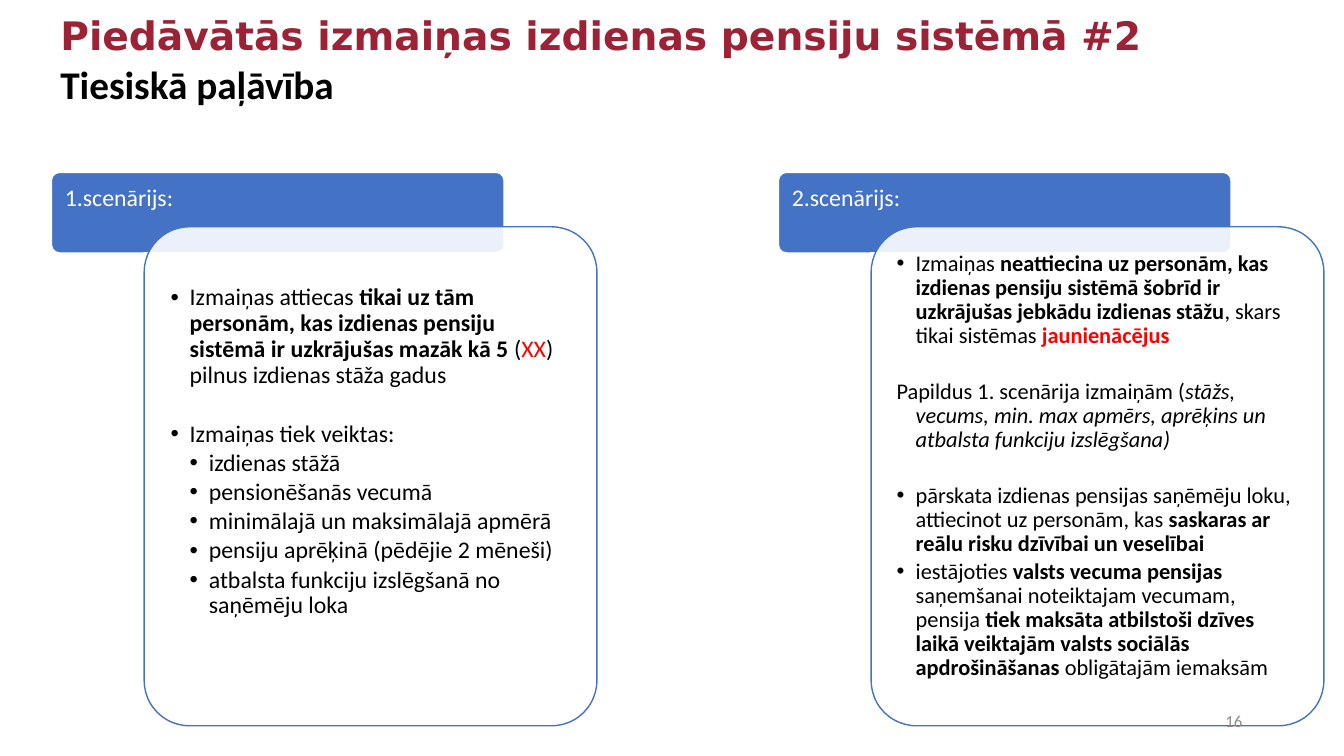
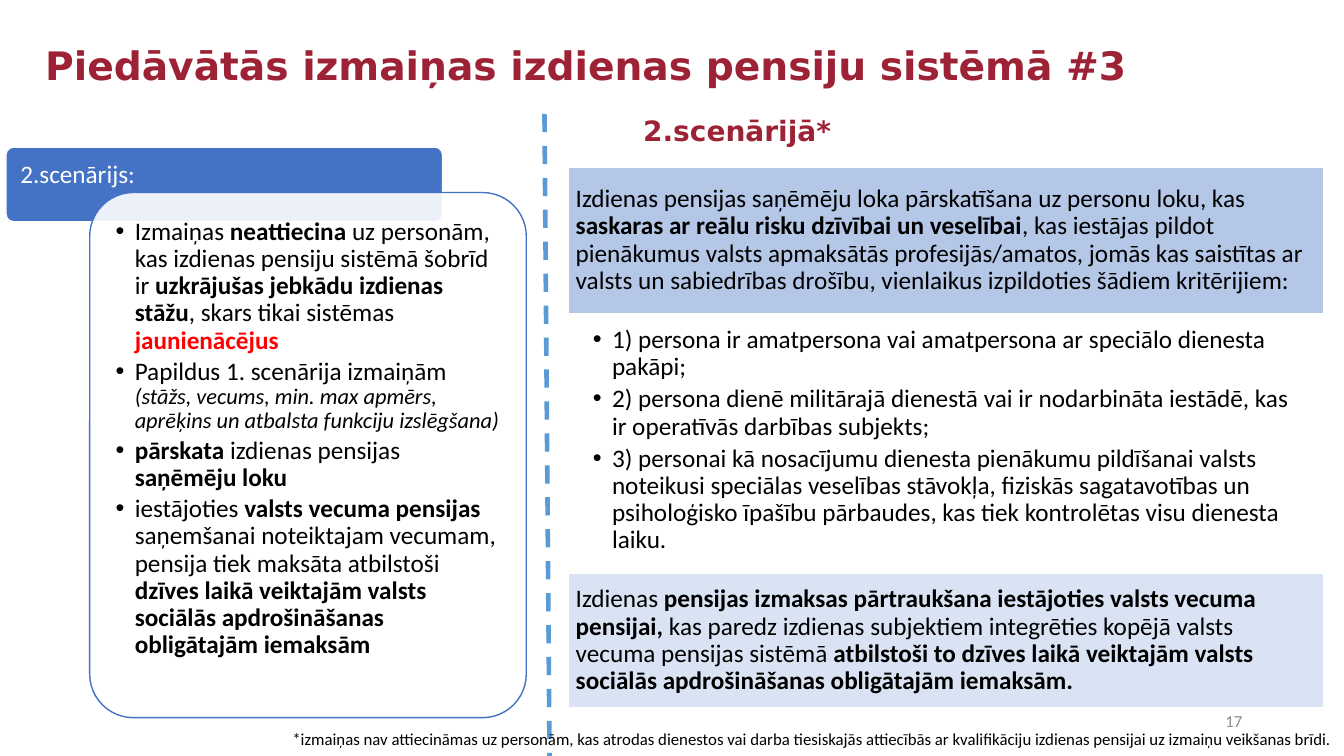
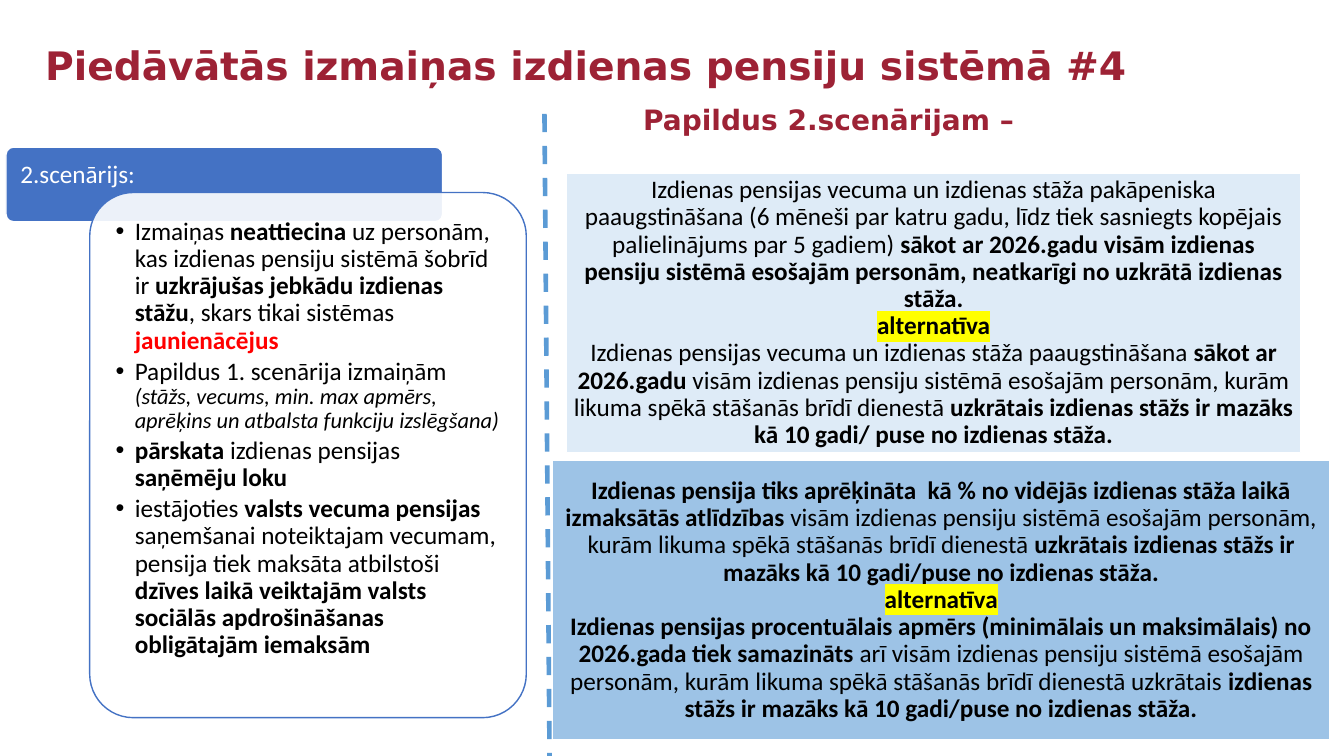
from dataclasses import dataclass
from typing import Optional, Sequence, Union

from lxml.etree import SubElement
from pptx import Presentation
from pptx.dml.color import RGBColor
from pptx.enum.dml import MSO_LINE
from pptx.enum.shapes import MSO_CONNECTOR, MSO_SHAPE
from pptx.enum.text import MSO_ANCHOR, PP_ALIGN
from pptx.oxml.ns import qn
from pptx.util import Inches, Pt


@dataclass(frozen=True)
class Theme:
    body_font: str = "Calibri"
    title_font: str = "DejaVu Sans"
    black: str = "000000"
    white: str = "FFFFFF"
    title: str = "9D2235"
    accent: str = "4472C4"
    divider: str = "5B9BD5"
    alert: str = "FF0000"
    muted: str = "8C8C8C"
    marker: str = "FFFF00"
    panel_strong: str = "B4C7E7"
    panel_soft: str = "DAE3F3"
    panel_pale: str = "DEEBF7"
    panel_sky: str = "9DC3E6"
    title_size: float = 28
    heading_size: float = 20
    text_size: float = 18
    card_size: float = 17
    dense_size: float = 16
    small_size: float = 12
    line_spacing: float = 0.9
    hanging: float = 0.19


THEME = Theme()


@dataclass(frozen=True)
class Span:
    text: str
    bold: bool = False
    italic: bool = False
    color: Optional[str] = None
    highlight: Optional[str] = None
    size: Optional[float] = None


@dataclass(frozen=True)
class Line:
    spans: Sequence[Union[str, Span]]
    level: int = 0
    bullet: bool = False
    gap_before: bool = False


@dataclass(frozen=True)
class Style:
    size: float
    color: str = THEME.black
    font: str = THEME.body_font
    bold: bool = False
    align: PP_ALIGN = PP_ALIGN.LEFT
    spacing: float = 1.0
    after: float = 0  # share of the type size


@dataclass(frozen=True)
class Box:
    left: float
    top: float
    width: float
    height: float

    def lengths(self) -> list:
        return [Inches(n) for n in (self.left, self.top, self.width, self.height)]


@dataclass(frozen=True)
class Card:
    """A header bar with a translucent, offset body over its lower edge."""
    label: str
    header: Box
    body: Box
    header_size: float
    body_size: float
    header_inset: float
    body_inset: float
    body_top_inset: float
    lines: Sequence[Line]


@dataclass(frozen=True)
class Panel:
    box: Box
    fill: str
    inset: float
    align: PP_ALIGN
    lines: Sequence[Line]


def bold(text: str) -> Span:
    return Span(text, bold=True)


def bullet(*spans: Union[str, Span], level: int = 1, gap: bool = False) -> Line:
    return Line(spans, level, True, gap)


def plain(*spans: Union[str, Span]) -> Line:
    return Line(spans)


def format_indent(para, line: Line) -> None:
    properties = para._p.get_or_add_pPr()
    properties.set("marL", str(Inches(THEME.hanging * line.level)))
    properties.set("indent", str(-Inches(THEME.hanging)))
    if line.bullet:
        SubElement(properties, qn("a:buFont"), typeface="Arial")
        SubElement(properties, qn("a:buChar"), char="•")
    else:
        SubElement(properties, qn("a:buNone"))


def add_span(para, span: Span, style: Style) -> None:
    run = para.add_run()
    run.text = span.text
    run.font.name = style.font
    run.font.size = Pt(span.size or style.size)
    run.font.bold = span.bold or style.bold
    run.font.italic = span.italic
    run.font.color.rgb = RGBColor.from_string(span.color or style.color)
    if span.highlight:
        properties = run._r.get_or_add_rPr()
        marker = SubElement(properties, qn("a:highlight"))
        SubElement(marker, qn("a:srgbClr"), val=span.highlight)
        properties.find(qn("a:solidFill")).addnext(marker)


def fill_text(shape, lines: Sequence[Line], style: Style, anchor: MSO_ANCHOR = MSO_ANCHOR.TOP,
              inset: Optional[float] = None, top_inset: Optional[float] = None) -> None:
    frame = shape.text_frame
    frame.word_wrap = True
    frame.vertical_anchor = anchor
    if inset is not None:
        frame.margin_left = frame.margin_right = Inches(inset)
        frame.margin_top = frame.margin_bottom = Inches(inset)
    if top_inset is not None:
        frame.margin_top = Inches(top_inset)
    for index, line in enumerate(lines):
        para = frame.add_paragraph() if index else frame.paragraphs[0]
        para.alignment = style.align
        para.line_spacing = style.spacing
        para.space_after = Pt(round(style.size * style.after, 1))
        para.space_before = Pt(style.size * 1.25 if line.gap_before else 0)
        if line.level:
            format_indent(para, line)
        for span in line.spans:
            add_span(para, Span(span) if isinstance(span, str) else span, style)


def add_text(page, box: Box, text: str, style: Style, **layout) -> None:
    fill_text(page.shapes.add_textbox(*box.lengths()), [plain(text)], style, **layout)


def add_block(page, kind: MSO_SHAPE, box: Box, fill: str, line: str):
    shape = page.shapes.add_shape(kind, *box.lengths())
    shape.shadow.inherit = False
    shape.fill.solid()
    shape.fill.fore_color.rgb = RGBColor.from_string(fill)
    shape.line.color.rgb = RGBColor.from_string(line)
    shape.line.width = Pt(1)
    if kind == MSO_SHAPE.ROUNDED_RECTANGLE:
        shape.adjustments[0] = 0.1
    return shape


def draw_card(page, card: Card) -> None:
    header = add_block(page, MSO_SHAPE.ROUNDED_RECTANGLE, card.header, THEME.accent, THEME.white)
    fill_text(header, [plain(card.label)],
              Style(card.header_size, THEME.white, spacing=THEME.line_spacing),
              inset=card.header_inset)
    body = add_block(page, MSO_SHAPE.ROUNDED_RECTANGLE, card.body, THEME.white, THEME.accent)
    color = body._element.spPr.find(qn("a:solidFill"))[0]
    SubElement(color, qn("a:alpha"), val="90000")
    fill_text(body, card.lines, Style(card.body_size, spacing=THEME.line_spacing, after=0.15),
              inset=card.body_inset, top_inset=card.body_top_inset)


def draw_panel(page, panel: Panel) -> None:
    shape = add_block(page, MSO_SHAPE.RECTANGLE, panel.box, panel.fill, THEME.white)
    style = Style(THEME.text_size, align=panel.align, spacing=THEME.line_spacing)
    fill_text(shape, panel.lines, style, MSO_ANCHOR.MIDDLE, panel.inset)


def draw_title(page, left: float, top: float, number: int) -> None:
    style = Style(THEME.title_size, THEME.title, THEME.title_font, True,
                  spacing=THEME.line_spacing)
    add_text(page, Box(left, top, 11.91, 1.45),
             f"Piedāvātās izmaiņas izdienas pensiju sistēmā #{number}", style, top_inset=0.06)


def draw_heading(page, text: str, top_inset: float) -> None:
    style = Style(THEME.heading_size, THEME.title, THEME.title_font, True)
    add_text(page, Box(6.28, 0.85, 6.17, 0.9), text, style, top_inset=top_inset)


def draw_page_number(page, number: int) -> None:
    style = Style(THEME.small_size, THEME.muted, align=PP_ALIGN.RIGHT)
    add_text(page, Box(9.42, 6.95, 3, 0.4), str(number), style, anchor=MSO_ANCHOR.MIDDLE)


def draw_divider(page) -> None:
    divider = page.shapes.add_connector(MSO_CONNECTOR.STRAIGHT, Inches(5.4), Inches(1.13),
                                        Inches(5.45), Inches(7.5))
    divider.line.color.rgb = RGBColor.from_string(THEME.divider)
    divider.line.width = Pt(3.25)
    divider.line.dash_style = MSO_LINE.DASH
    SubElement(divider._element.spPr, qn("a:effectLst"))


NEWCOMERS = Span("jaunienācējus", bold=True, color=THEME.alert)

FIRST_SCENARIO = [
    bullet("Izmaiņas attiecas ",
           bold("tikai uz tām personām, kas izdienas pensiju sistēmā ir uzkrājušas mazāk kā 5 "),
           "(", Span("XX", color=THEME.alert), ") pilnus izdienas stāža gadus"),
    bullet("Izmaiņas tiek veiktas:", gap=True),
    *(bullet(text, level=2) for text in (
        "izdienas stāžā",
        "pensionēšanās vecumā",
        "minimālajā un maksimālajā apmērā",
        "pensiju aprēķinā (pēdējie 2 mēneši)",
        "atbalsta funkciju izslēgšanā no saņēmēju loka")),
]

SECOND_SCENARIO = [
    bullet("Izmaiņas ",
           bold("neattiecina uz personām, kas izdienas pensiju sistēmā šobrīd ir "
                "uzkrājušas jebkādu izdienas stāžu"),
           ", skars tikai sistēmas ", NEWCOMERS),
    Line(["Papildus 1. scenārija izmaiņām (",
          Span("stāžs, vecums, min. max apmērs, aprēķins un atbalsta funkciju izslēgšana)",
               italic=True)], level=1, gap_before=True),
    bullet("pārskata izdienas pensijas saņēmēju loku, attiecinot uz personām, kas ",
           bold("saskaras ar reālu risku dzīvībai un veselībai"), gap=True),
    bullet("iestājoties ", bold("valsts vecuma pensijas "),
           "saņemšanai noteiktajam vecumam, pensija ",
           bold("tiek maksāta atbilstoši dzīves laikā veiktajām valsts sociālās apdrošināšanas "),
           "obligātajām iemaksām"),
]

SCENARIO_SUMMARY = [
    bullet("Izmaiņas ", bold("neattiecina"),
           " uz personām, kas izdienas pensiju sistēmā šobrīd ir ",
           bold("uzkrājušas jebkādu izdienas stāžu"), ", skars tikai sistēmas ", NEWCOMERS),
    bullet("Papildus 1. scenārija izmaiņām ",
           Span("(stāžs, vecums, min. max apmērs, aprēķins un atbalsta funkciju izslēgšana)",
                italic=True, size=THEME.dense_size)),
    bullet(bold("pārskata"), " izdienas pensijas ", bold("saņēmēju loku")),
    bullet("iestājoties ", bold("valsts vecuma pensijas "),
           "saņemšanai noteiktajam vecumam, pensija tiek maksāta atbilstoši ",
           bold("dzīves laikā veiktajām valsts sociālās apdrošināšanas obligātajām iemaksām")),
]

SUMMARY_CARD = Card("2.scenārijs:", Box(0.06, 1.46, 4.33, 0.74), Box(0.89, 1.91, 4.33, 5.21),
                    THEME.text_size, THEME.text_size, 0.12, 0.13, 0.13, SCENARIO_SUMMARY)

CRITERIA = [
    bullet("1) persona ir amatpersona vai amatpersona ar speciālo dienesta pakāpi;"),
    bullet("2) persona dienē militārajā dienestā vai ir nodarbināta iestādē, "
           "kas ir operatīvās darbības subjekts;"),
    bullet("3) personai kā nosacījumu dienesta pienākumu pildīšanai valsts noteikusi speciālas "
           "veselības stāvokļa, fiziskās sagatavotības un psiholoģisko īpašību pārbaudes, "
           "kas tiek kontrolētas visu dienesta laiku."),
]

CRITERIA_PANELS = [
    Panel(Box(5.64, 1.66, 7.49, 1.45), THEME.panel_strong, 0.07, PP_ALIGN.LEFT, [plain(
        "Izdienas pensijas saņēmēju loka pārskatīšana uz personu loku, kas ",
        bold("saskaras ar reālu risku dzīvībai un veselībai"),
        ", kas iestājas pildot pienākumus valsts apmaksātās profesijās/amatos, jomās kas "
        "saistītas ar valsts un sabiedrības drošību, vienlaikus izpildoties šādiem "
        "kritērijiem:")]),
    Panel(Box(5.64, 5.69, 7.49, 1.33), THEME.panel_soft, 0.07, PP_ALIGN.LEFT, [plain(
        "Izdienas ",
        bold("pensijas izmaksas pārtraukšana iestājoties valsts vecuma pensijai,"),
        " kas paredz izdienas subjektiem integrēties kopējā valsts vecuma pensijas sistēmā ",
        bold("atbilstoši to dzīves laikā veiktajām valsts sociālās apdrošināšanas "
             "obligātajām iemaksām."))]),
]

ALTERNATIVE = plain(Span("alternatīva", bold=True, highlight=THEME.marker))

ALTERNATIVE_PANELS = [
    Panel(Box(5.62, 1.72, 7.28, 2.77), THEME.panel_pale, 0.05, PP_ALIGN.CENTER, [
        plain("Izdienas pensijas vecuma un izdienas stāža pakāpeniska paaugstināšana (6 mēneši "
              "par katru gadu, līdz tiek sasniegts kopējais palielinājums par 5 gadiem) ",
              bold("sākot ar 2026.gadu visām izdienas pensiju sistēmā esošajām personām, "
                   "neatkarīgi no uzkrātā izdienas stāža.")),
        ALTERNATIVE,
        plain("Izdienas pensijas vecuma un izdienas stāža paaugstināšana ",
              bold("sākot ar 2026.gadu"),
              " visām izdienas pensiju sistēmā esošajām personām, kurām likuma spēkā stāšanās "
              "brīdī dienestā ",
              bold("uzkrātais izdienas stāžs ir mazāks kā 10 gadi/ puse no izdienas stāža."))]),
    Panel(Box(5.48, 4.57, 7.71, 2.77), THEME.panel_sky, 0.05, PP_ALIGN.CENTER, [
        plain(bold("Izdienas pensija tiks aprēķināta  kā % no vidējās izdienas stāža laikā "
                   "izmaksātās atlīdzības "),
              "visām izdienas pensiju sistēmā esošajām personām, kurām likuma spēkā stāšanās "
              "brīdī dienestā ",
              bold("uzkrātais izdienas stāžs ir mazāks kā 10 gadi/puse no izdienas stāža.")),
        ALTERNATIVE,
        plain(bold("Izdienas pensijas procentuālais apmērs (minimālais un maksimālais) no "
                   "2026.gada tiek samazināts "),
              "arī visām izdienas pensiju sistēmā esošajām personām, kurām likuma spēkā "
              "stāšanās brīdī dienestā uzkrātais ",
              bold("izdienas stāžs ir mazāks kā 10 gadi/puse no izdienas stāža."))]),
]


def build_scenarios(page) -> None:
    scenarios = [
        ("1.scenārijs:", THEME.card_size, 0.13, 0.45, FIRST_SCENARIO),
        ("2.scenārijs:", THEME.dense_size, 0.12, 0.12, SECOND_SCENARIO),
    ]
    for index, (label, size, inset, top_inset, lines) in enumerate(scenarios):
        left = 0.51 + 7.21 * index
        draw_card(page, Card(label, Box(left, 1.71, 4.49, 0.8), Box(left + 0.92, 2.25, 4.49, 4.95),
                             THEME.card_size, size, 0.11, inset, top_inset, lines))
    draw_title(page, 0.5, 0.11, 2)
    draw_page_number(page, 16)
    add_text(page, Box(0.5, 0.55, 6.67, 0.57), "Tiesiskā paļāvība",
             Style(THEME.title_size, bold=True))


def build_comparison(page, number: int, heading: str, heading_inset: float,
                     panels: Sequence[Panel]) -> None:
    draw_card(page, SUMMARY_CARD)
    draw_title(page, 0.35, 0.4, number)
    draw_heading(page, heading, heading_inset)
    for panel in panels:
        draw_panel(page, panel)
    draw_divider(page)


def add_criteria(page) -> None:
    criteria = page.shapes.add_textbox(*Box(5.62, 3.21, 7.49, 2.43).lengths())
    fill_text(criteria, CRITERIA, Style(THEME.text_size, spacing=THEME.line_spacing, after=0.2),
              inset=0.14, top_inset=0.03)
    criteria.text_frame.margin_left = Inches(0.26)
    draw_page_number(page, 17)
    add_text(page, Box(2.9, 7.18, 10.43, 0.3),
             "*izmaiņas nav attiecināmas uz personām, kas atrodas dienestos vai darba tiesiskajās "
             "attiecībās ar kvalifikāciju izdienas pensijai uz izmaiņu veikšanas brīdi.",
             Style(THEME.small_size), inset=0, top_inset=0.05)


def main() -> None:
    deck = Presentation()
    deck.slide_width, deck.slide_height = Inches(13.33), Inches(7.5)
    scenarios, criteria, alternatives = (
        deck.slides.add_slide(deck.slide_layouts[6]) for _ in range(3))
    build_scenarios(scenarios)
    build_comparison(criteria, 3, "2.scenārijā*", 0.28, CRITERIA_PANELS)
    add_criteria(criteria)
    build_comparison(alternatives, 4, "Papildus 2.scenārijam –", 0.17, ALTERNATIVE_PANELS)
    deck.save("out.pptx")


if __name__ == "__main__":
    main()
